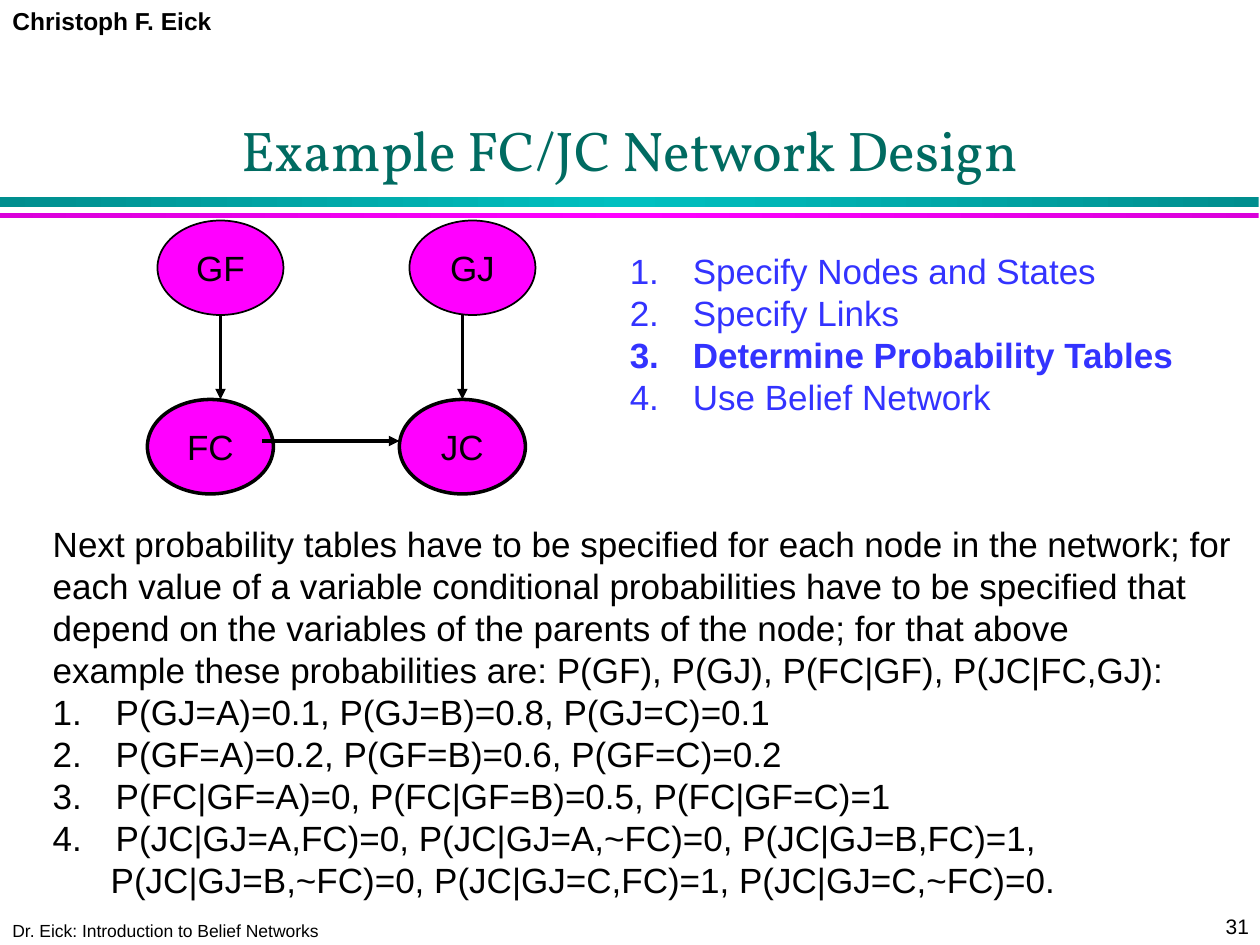
from copy import deepcopy
from pptx import Presentation
from pptx.dml.color import RGBColor
from pptx.enum.shapes import MSO_CONNECTOR, MSO_SHAPE as SHAPE
from pptx.enum.text import MSO_ANCHOR as ANCHOR, MSO_AUTO_SIZE as AUTO, PP_ALIGN as ALIGN
from pptx.oxml.ns import qn
from pptx.util import Inches, Pt
from lxml import etree

BANDS = [
    (1.56, 0.08, ("008E8E", "00C0C0", "008E8E")),
    (1.69, 0.04, ("DA00DA", "FF00FF", "DA00DA")),
]
LABELS = [
    ("Christoph F. Eick", (0, 0, 1.79, 0.33), {"size": 14, "bold": True}, {"word_wrap": False}),
    ("Dr. Eick: Introduction to Belief Networks", (0, 7.25, 3.36, 0.27), {"size": 10}, {}),
    ("31", (9.63, 7.2, 0.4, 0.3), {"size": 12}, {"word_wrap": False}),
    ("Example FC/JC Network Design", (0.75, 0.67, 8.5, 0.83),
     {"size": 32, "name": "Vollkorn", "color": "006B61"},
     {"vertical_anchor": ANCHOR.BOTTOM, "auto_size": AUTO.NONE}),
]
NODES = [("GF", 1.25, 1.75, 1), ("FC", 1.17, 3.17, 2), ("JC", 3.17, 3.17, 2), ("GJ", 3.25, 1.75, 1)]
ARROWS = [((1.75, 2.5), (1.75, 3.17)), ((2.08, 3.5), (3.17, 3.5)), ((3.67, 2.5), (3.67, 3.17))]
HANGING, NUMBERED, CONTINUED = (0.5, -0.5, False), (0.5, -0.5, True), (0.46, 0, False)
EXPLANATION = [
    ("Next probability tables have to be specified for each node in the network; for", HANGING),
    ("each value of a variable conditional probabilities have to be specified that", HANGING),
    ("depend on the variables of the parents of the node; for that above", HANGING),
    ("example these probabilities are: P(GF), P(GJ), P(FC|GF), P(JC|FC,GJ):", HANGING),
    ("P(GJ=A)=0.1, P(GJ=B)=0.8, P(GJ=C)=0.1", NUMBERED),
    ("P(GF=A)=0.2, P(GF=B)=0.6, P(GF=C)=0.2", NUMBERED),
    ("P(FC|GF=A)=0, P(FC|GF=B)=0.5, P(FC|GF=C)=1", NUMBERED),
    ("P(JC|GJ=A,FC)=0, P(JC|GJ=A,~FC)=0, P(JC|GJ=B,FC)=1,", NUMBERED),
    ("P(JC|GJ=B,~FC)=0, P(JC|GJ=C,FC)=1, P(JC|GJ=C,~FC)=0.", CONTINUED),
]
STEPS = ["Specify Nodes and States", "Specify Links", "Determine Probability Tables", "Use Belief Network"]
CURRENT_STEP = "Determine Probability Tables"


def rgb(value):
    return RGBColor.from_string(value)


def inches(*values):
    return [Inches(v) for v in values]


def write(p, text, size=20, name="Arial", color="000000", bold=False):
    r = p.add_run()
    r.text = text
    for key, value in {"size": Pt(size), "name": name, "bold": bold}.items():
        setattr(r.font, key, value)
    r.font.color.rgb = rgb(color)


def text_box(s, box, **frame):
    tf = s.shapes.add_textbox(*inches(*box)).text_frame
    for key, value in {"word_wrap": True, "auto_size": AUTO.SHAPE_TO_FIT_TEXT, **frame}.items():
        setattr(tf, key, value)
    return tf


def add_band(s, top, height, colors):
    sp = s.shapes.add_shape(SHAPE.RECTANGLE, *inches(0, top, 9.99, height))
    sp.shadow.inherit = False
    sp.line.fill.background()
    sp.fill.gradient()
    sp.fill.gradient_angle = 0
    stops = sp.fill._fill._gradFill.find(qn("a:gsLst"))
    stops.append(deepcopy(stops[0]))
    for i, (stop, color) in enumerate(zip(sp.fill.gradient_stops, colors)):
        stop.position = i / 2
        stop.color.rgb = rgb(color)


def add_node(s, label, left, top, weight):
    sp = s.shapes.add_shape(SHAPE.OVAL, *inches(left, top, 1, 0.75))
    sp.shadow.inherit = False
    sp.fill.solid()
    sp.fill.fore_color.rgb = rgb("FF00FF")
    sp.line.color.rgb = rgb("000000")
    sp.line.width = Pt(weight)
    tf = sp.text_frame
    tf.word_wrap = False
    tf.vertical_anchor = ANCHOR.MIDDLE
    p = tf.paragraphs[0]
    p.alignment = ALIGN.CENTER
    write(p, label)


def add_arrow(s, start, end):
    line = s.shapes.add_connector(MSO_CONNECTOR.STRAIGHT, *inches(*start, *end))
    line.line.color.rgb = rgb("000000")
    line.line.width = Pt(2)
    etree.SubElement(line.line._get_or_add_ln(), qn("a:tailEnd"), type="triangle")
    etree.SubElement(line._element.spPr, qn("a:effectLst"))


def add_list(s, box, items, color):
    tf = text_box(s, box, word_wrap=False)
    for i, (text, (margin, indent, numbered)) in enumerate(items):
        p = tf.paragraphs[0] if i == 0 else tf.add_paragraph()
        pPr = p._p.get_or_add_pPr()
        pPr.set("marL", str(Inches(margin)))
        pPr.set("indent", str(Inches(indent)))
        if numbered:
            etree.SubElement(pPr, qn("a:buFont"), typeface="+mj-lt")
            etree.SubElement(pPr, qn("a:buAutoNum"), type="arabicPeriod")
        else:
            etree.SubElement(pPr, qn("a:buNone"))
        write(p, text, color=color, bold=text == CURRENT_STEP)


def main():
    prs = Presentation()
    prs.slide_width, prs.slide_height = inches(10, 7.5)
    s = prs.slides.add_slide(prs.slide_layouts[6])
    for band in BANDS:
        add_band(s, *band)
    for text, box, font, frame in LABELS:
        p = text_box(s, box, **frame).paragraphs[0]
        if font["size"] == 32:
            p.alignment = ALIGN.CENTER
        write(p, text, **font)
    for node in NODES:
        add_node(s, *node)
    for arrow in ARROWS:
        add_arrow(s, *arrow)
    add_list(s, (0.32, 4.1, 9.61, 3.1), EXPLANATION, "000000")
    add_list(s, (4.9, 1.93, 4.53, 1.43), [(step, NUMBERED) for step in STEPS], "3333FF")
    prs.save("out.pptx")


if __name__ == "__main__":
    main()
